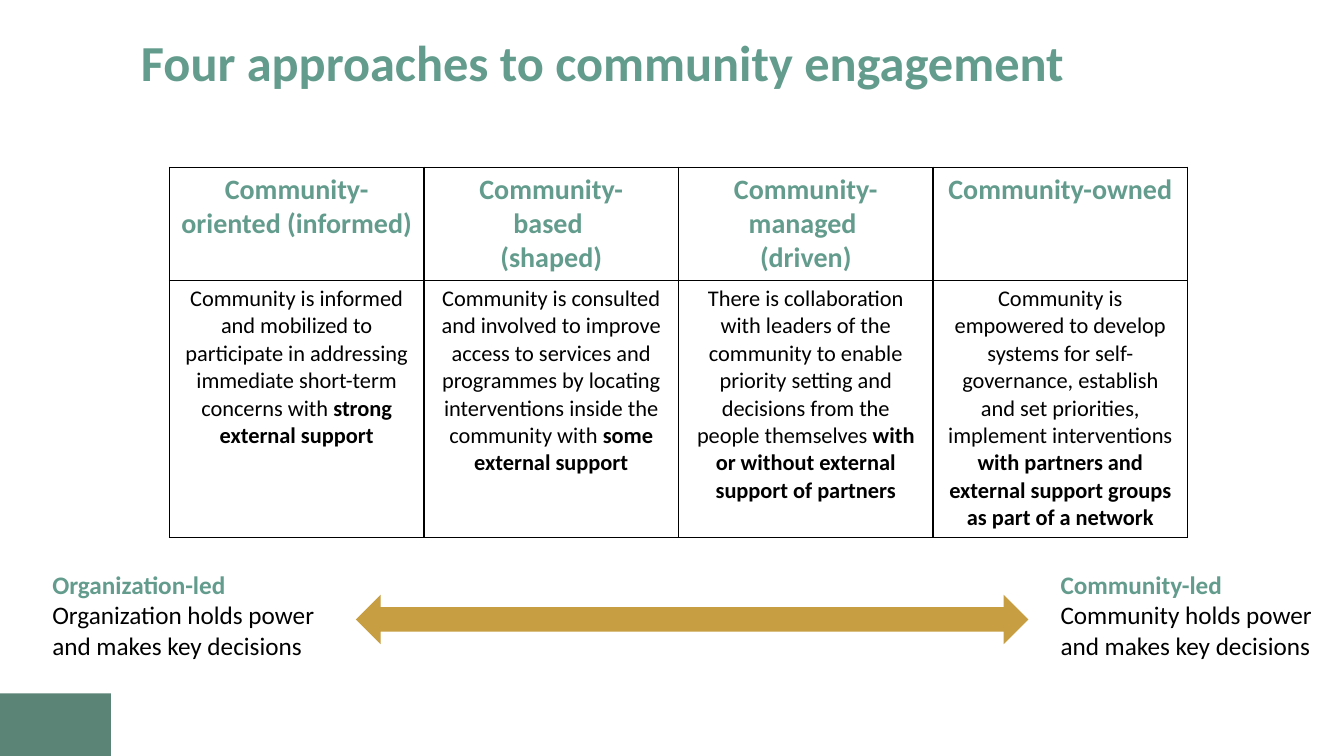
from lxml.etree import SubElement as Sub
from pptx import Presentation
from pptx.dml.color import RGBColor as RGB
from pptx.enum.shapes import MSO_SHAPE as Kind
from pptx.enum.text import MSO_ANCHOR as Anchor, PP_ALIGN as Align
from pptx.oxml import parse_xml
from pptx.oxml.ns import nsdecls, qn
from pptx.util import Pt

PX = 9144
GREEN = RGB(0x63, 0x9C, 0x8C)
DARK = RGB(0x5B, 0x84, 0x77)
GOLD = RGB(0xC7, 0x9E, 0x42)
BLACK = RGB(0, 0, 0)
WHITE = RGB(255, 255, 255)

HEADS = [
    ["Community-oriented (informed)"],
    ["Community-", "based ", "(shaped)"],
    ["Community-managed ", "(driven)"],
    ["Community-owned"],
]
BODIES = [
    ("Community is informed and mobilized to participate in addressing "
     "immediate short-term concerns with ", "strong external support"),
    ("Community is consulted and involved to improve access to services and "
     "programmes by locating interventions inside the community with ",
     "some external support"),
    ("There is collaboration with leaders of the community to enable priority "
     "setting and decisions from the people themselves ",
     "with or without external support of partners"),
    ("Community is empowered to develop systems for self-governance, establish "
     "and set priorities, implement interventions ",
     "with partners and external support groups as part of a network"),
]
ENDS = [
    ("Organization-led\tCommunity-led", GREEN, True),
    ("Organization holds power\tCommunity holds power", BLACK, False),
    ("and makes key decisions\tand makes key decisions", BLACK, False),
]


class Deck:
    """Holds the style and the current slide, and adds elements to it."""

    def __init__(self, wide, high, font):
        self.prs = Presentation()
        self.prs.slide_width, self.prs.slide_height = wide * PX, high * PX
        self.slide = self.prs.slides.add_slide(self.prs.slide_layouts[6])
        self.font = font

    def fill(self, frame, lines, size, align=Align.LEFT, tab=None, space=None):
        frame.word_wrap = True
        for i, line in enumerate(lines):
            para = frame.add_paragraph() if i else frame.paragraphs[0]
            para.alignment = align
            if space:
                para.line_spacing = space
            if tab:
                stops = Sub(para._p.get_or_add_pPr(), qn("a:tabLst"))
                Sub(stops, qn("a:tab"), pos=str(tab * PX), algn="l")
            for text, color, bold in line:
                run = para.add_run()
                run.text = text
                run.font.name, run.font.size = self.font, Pt(size)
                run.font.bold = bold
                run.font.color.rgb = color

    def text(self, box, lines, size, anchor=Anchor.TOP, **style):
        frame = self.slide.shapes.add_textbox(*(n * PX for n in box)).text_frame
        frame.vertical_anchor = anchor
        self.fill(frame, lines, size, **style)

    def shape(self, kind, box, color):
        shape = self.slide.shapes.add_shape(kind, *(n * PX for n in box))
        shape.shadow.inherit = False
        shape.fill.solid()
        shape.fill.fore_color.rgb = color
        shape.line.fill.background()

    def border(self, cell):
        props = cell._tc.get_or_add_tcPr()
        for i, side in enumerate("LRTB"):
            props.insert(i, parse_xml(
                f'<a:ln{side} {nsdecls("a")} w="12700"><a:solidFill>'
                f'<a:srgbClr val="{BLACK}"/></a:solidFill></a:ln{side}>'))

    def table(self, box, highs, rows):
        spot = [n * PX for n in box]
        grid = self.slide.shapes.add_table(len(rows), len(rows[0][1]), *spot).table
        grid.first_row = grid.horz_banding = False
        for r, (size, cells) in enumerate(rows):
            grid.rows[r].height = highs[r] * PX
            for c, lines in enumerate(cells):
                cell = grid.cell(r, c)
                cell.fill.solid()
                cell.fill.fore_color.rgb = WHITE
                self.border(cell)
                self.fill(cell.text_frame, lines, size, Align.CENTER)


def main():
    deck = Deck(1333, 750, "Calibri")
    deck.shape(Kind.RECTANGLE, (0, 688, 110, 66), DARK)
    deck.text((130, 29, 1111, 71),
              [[("Four approaches to community engagement", GREEN, True)]],
              36, Anchor.MIDDLE, space=0.9)
    heads = [[[(text, GREEN, True)] for text in head] for head in HEADS]
    bodies = [[[(plain, BLACK, False), (strong, BLACK, True)]]
              for plain, strong in BODIES]
    deck.table((168, 166, 1010, 367), (112, 255), [(20, heads), (16, bodies)])
    deck.text((42, 560, 1292, 101), [[end] for end in ENDS], 18, tab=1000)
    deck.shape(Kind.LEFT_RIGHT_ARROW, (353, 590, 667, 49), GOLD)
    deck.prs.save("out.pptx")


if __name__ == "__main__":
    main()
